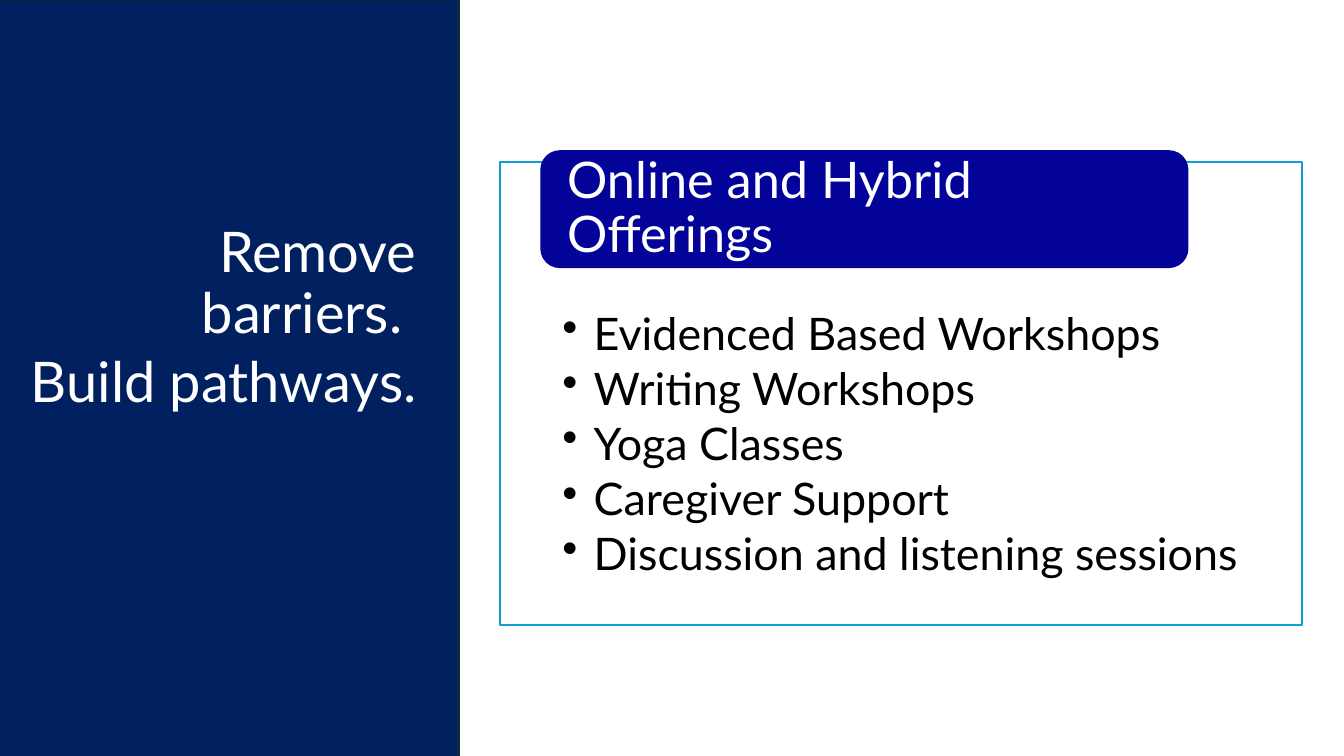
from pptx import Presentation
from pptx.dml.color import RGBColor
from pptx.enum.shapes import MSO_SHAPE
from pptx.enum.text import MSO_ANCHOR, PP_ALIGN
from pptx.util import Inches, Pt
from lxml import etree

RECT, ROUNDED = MSO_SHAPE.RECTANGLE, MSO_SHAPE.ROUNDED_RECTANGLE
TOP, MIDDLE, BOTTOM = MSO_ANCHOR.TOP, MSO_ANCHOR.MIDDLE, MSO_ANCHOR.BOTTOM
LEFT, RIGHT = PP_ALIGN.LEFT, PP_ALIGN.RIGHT
COLORS = {
    "white": "FFFFFF",
    "black": "000000",
    "navy": "002060",
    "edge": "092A39",
    "royal": "03039A",
    "sky": "0F9ED5",
}


class SlideBuilder:
    """Draws styled elements on one slide, placed in percent of its size."""

    font = "Lato"
    line_spacing = 0.9
    bullet_indent = Inches(0.31)

    def __init__(self, deck):
        self.deck = deck
        self.slide = deck.slides.add_slide(deck.slide_layouts[6])

    def place(self, left, top, width, height):
        across, down = self.deck.slide_width / 100, self.deck.slide_height / 100
        return [round(n) for n in (left * across, top * down, width * across, height * down)]

    def color(self, name):
        return RGBColor.from_string(COLORS[name])

    def panel(self, area, fill, line=None, kind=RECT):
        panel = self.slide.shapes.add_shape(kind, *self.place(*area))
        panel.shadow.inherit = False
        panel.fill.solid()
        panel.fill.fore_color.rgb = self.color(fill)
        if line:
            panel.line.color.rgb = self.color(line)
            panel.line.width = Pt(1.5)
        else:
            panel.line.fill.background()
        return panel

    def text_box(self, area):
        return self.slide.shapes.add_textbox(*self.place(*area))

    def set_text(self, holder, lines, size, color, insets, anchor=TOP, align=LEFT,
                 space_after=0, bulleted=False):
        frame = holder.text_frame
        frame.word_wrap = True
        frame.vertical_anchor = anchor
        (frame.margin_left, frame.margin_top,
         frame.margin_right, frame.margin_bottom) = map(Inches, insets)
        frame.text = "\n".join(lines)
        for paragraph in frame.paragraphs:
            if bulleted:
                self.add_bullet(paragraph)
            paragraph.alignment = align
            paragraph.line_spacing = self.line_spacing
            paragraph.space_after = Pt(space_after)
            paragraph.font.name = self.font
            paragraph.font.size = Pt(size)
            paragraph.font.color.rgb = self.color(color)

    def add_bullet(self, paragraph):
        properties = paragraph._p.get_or_add_pPr()
        properties.set("marL", str(self.bullet_indent))
        properties.set("indent", str(-self.bullet_indent))
        namespace = properties.nsmap["a"]
        etree.SubElement(properties, f"{{{namespace}}}buChar", char="•")


def main():
    deck = Presentation()
    deck.slide_width, deck.slide_height = Inches(13.33), Inches(7.5)
    builder = SlideBuilder(deck)

    offerings = builder.panel((37.2, 21.47, 59.7, 61.2), "white", "sky")
    builder.set_text(
        offerings,
        ["Evidenced Based Workshops", "Writing Workshops", "Yoga Classes",
         "Caregiver Support", "Discussion and listening sessions"],
        32, "black", (0.62, 1.48, 0.62, 0.25), space_after=4.8, bulleted=True)

    heading = builder.panel((40.2, 19.87, 48.23, 15.6), "royal", kind=ROUNDED)
    builder.set_text(heading, ["Online and Hybrid Offerings"], 36, "white",
                     (0.21, 0, 0.21, 0), MIDDLE)

    builder.panel((-0.83, 0, 34.95, 102.67), "navy", "edge")
    motto = builder.text_box((1.35, 29.6, 30.38, 34.93))
    builder.set_text(motto, ["Remove barriers. ", "Build pathways."], 40, "white",
                     (0.1, 0.05, 0.1, 0.73), BOTTOM, RIGHT, space_after=6)

    deck.save("out.pptx")


if __name__ == "__main__":
    main()
